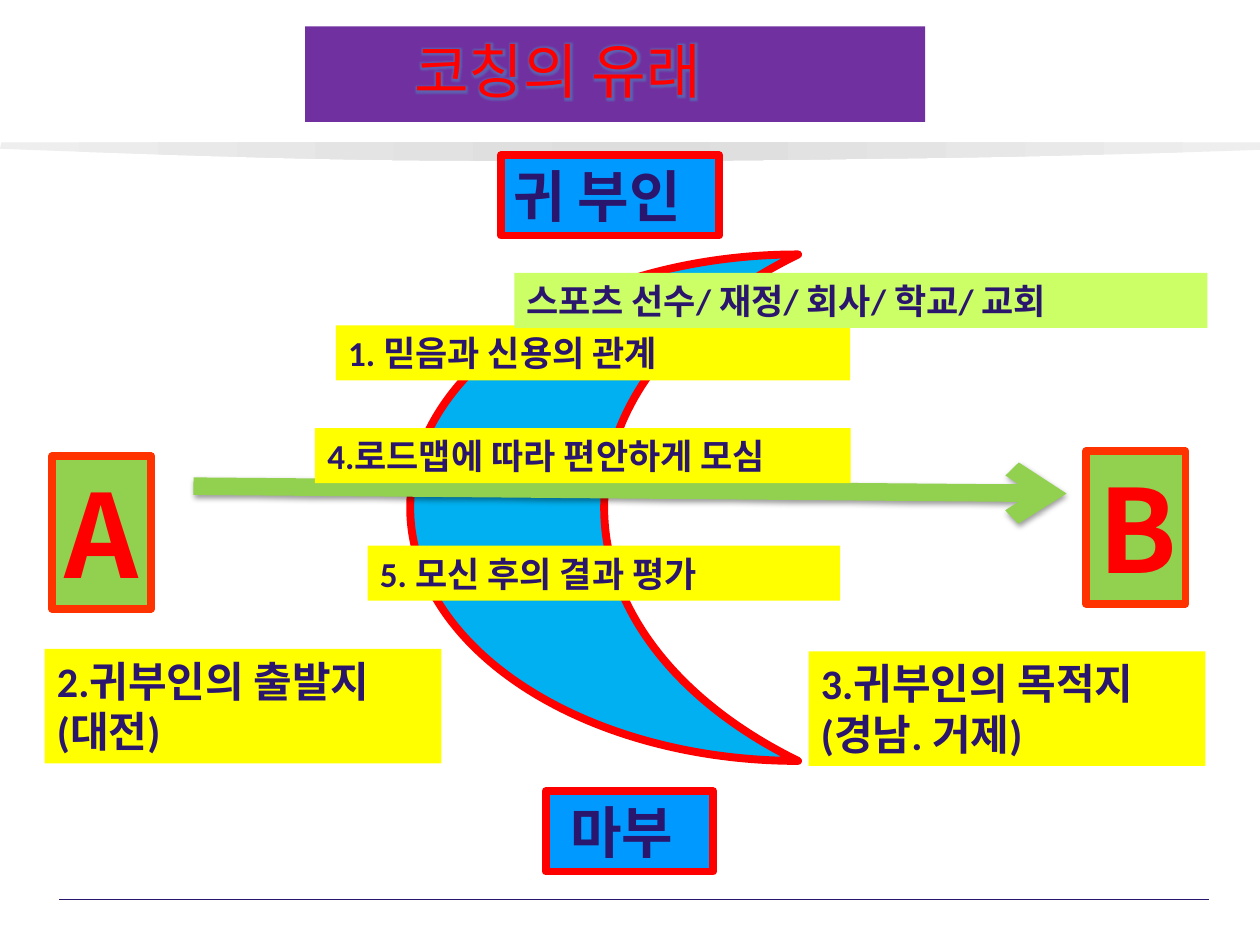
from dataclasses import dataclass

from lxml.etree import SubElement
from pptx import Presentation
from pptx.dml.color import RGBColor
from pptx.enum.shapes import MSO_CONNECTOR, MSO_SHAPE
from pptx.enum.text import MSO_ANCHOR, MSO_AUTO_SIZE, PP_ALIGN
from pptx.oxml import parse_xml
from pptx.oxml.ns import nsdecls, qn
from pptx.util import Cm, Pt


@dataclass(frozen=True)
class Theme:
    ink: str = "2B166E"
    red: str = "FF0000"
    orange: str = "FF3300"
    green: str = "92D050"
    lime: str = "CCFF66"
    yellow: str = "FFFF00"
    blue: str = "0099FF"
    sky: str = "00B0F0"
    purple: str = "7030A0"
    glow: str = "4F81BD"
    latin: str = "Calibri"
    korean: str = "Noto Sans CJK KR"
    letter: int = 66
    title: int = 34
    role: int = 32
    place: int = 24
    step: int = 20
    frame: float = 4.5


T = Theme()


def rgb(value):
    return RGBColor.from_string(value)


def write(sp, text, size, color=T.ink, font=T.latin, bold=True, wrap=True,
          anchor=MSO_ANCHOR.TOP, indent=0, spacing=None):
    """Fill a shape with left-aligned text, one paragraph per line."""
    tf = sp.text_frame
    tf.word_wrap = wrap
    tf.auto_size = MSO_AUTO_SIZE.NONE
    tf.vertical_anchor = anchor
    tf.margin_left = Cm(0.25 + indent)
    tf.margin_right = Cm(0.25)
    tf.margin_top = tf.margin_bottom = Cm(0.13)
    for i, line in enumerate(text.split("\n")):
        p = tf.paragraphs[0] if i == 0 else tf.add_paragraph()
        p.alignment = PP_ALIGN.LEFT
        if spacing:
            p.line_spacing = spacing
        r = p.add_run()
        r.text = line
        r.font.size, r.font.bold, r.font.name = Pt(size), bold, font
        r.font.color.rgb = rgb(color)
        SubElement(r.font._element, qn("a:ea")).set("typeface", T.korean)
    return tf


def add_block(s, box, fill, line=None, kind=MSO_SHAPE.RECTANGLE):
    sp = s.shapes.add_shape(kind, *map(Cm, box))
    sp.shadow.inherit = False
    sp.fill.solid()
    sp.fill.fore_color.rgb = rgb(fill)
    if line:
        sp.line.color.rgb = rgb(line)
        sp.line.width = Pt(T.frame)
    else:
        sp.line.fill.background()
    return sp


def add_line(s, start, end, color, width):
    c = s.shapes.add_connector(MSO_CONNECTOR.STRAIGHT, *map(Cm, start + end))
    c.line.color.rgb = rgb(color)
    c.line.width = Pt(width)
    SubElement(c._element.spPr, qn("a:effectLst"))
    return c


def add_arrow(s, start, end):
    c = add_line(s, start, end, T.green, 10)
    SubElement(c.line._get_or_add_ln(), qn("a:tailEnd")).set("type", "arrow")
    effects = c._element.spPr.find(qn("a:effectLst"))
    effects.append(parse_xml(
        f'<a:outerShdw {nsdecls("a")} blurRad="{Pt(3.1)}" dist="{Pt(1.6)}" dir="5400000" '
        'rotWithShape="0"><a:srgbClr val="000000"><a:alpha val="38000"/></a:srgbClr>'
        '</a:outerShdw>'))


def curve(a, b, c, d, steps=12):
    """Points along a cubic curve, without its first point."""
    for i in range(1, steps + 1):
        t = i / steps
        u = 1 - t
        yield tuple(Cm(u**3 * a[k] + 3 * u * u * t * b[k] + 3 * u * t * t * c[k] + t**3 * d[k])
                    for k in (0, 1))


def add_swoosh(s):
    """Grey band under the title with a curved lower edge."""
    knots = [(0, 3), (1.35, 3.05), (5.18, 3.2), (8.1, 3.23), (11.02, 3.25),
             (14.63, 3.25), (17.5, 3.2), (20.4, 3.18), (24.1, 3.07), (25.43, 3.02)]
    points = [pt for i in range(0, 9, 3) for pt in curve(*knots[i:i + 4])]
    fb = s.shapes.build_freeform(Cm(0.03), Cm(2.87))
    fb.add_line_segments([(0, Cm(3)), *points, (Cm(25.43), Cm(2.87))], close=True)
    sp = fb.convert_to_shape()
    sp.shadow.inherit = False
    sp.line.fill.background()
    sp.fill.gradient()
    sp.fill.gradient_angle = 0
    stops = sp._element.spPr.find(qn("a:gradFill")).find(qn("a:gsLst"))
    for stop in list(stops):
        stops.remove(stop)
    for pos, color in ((0, "EEEEEE"), (50, "DDDDDD"), (100, "EEEEEE")):
        gs = SubElement(stops, qn("a:gs"), pos=str(pos * 1000))
        SubElement(gs, qn("a:srgbClr"), val=color)


def format_title(s):
    sp = s.shapes.title
    sp.left, sp.top, sp.width, sp.height = map(Cm, (6.15, 0.53, 12.5, 1.93))
    sp.fill.solid()
    sp.fill.fore_color.rgb = rgb(T.purple)
    tf = write(sp, "코칭의 유래", T.title, color=T.red, font=T.korean, bold=False,
               anchor=MSO_ANCHOR.MIDDLE, indent=1.95, spacing=0.9)
    # Soft glow around the title letters
    fill = tf.paragraphs[0].runs[0].font._element.find(qn("a:solidFill"))
    fill.addnext(parse_xml(
        f'<a:effectLst {nsdecls("a")}><a:glow rad="{Pt(4)}"><a:srgbClr val="{T.glow}">'
        '<a:alpha val="60000"/></a:srgbClr></a:glow></a:effectLst>'))


def main():
    prs = Presentation()
    prs.slide_width, prs.slide_height = Cm(25.4), Cm(19.05)
    s = prs.slides.add_slide(prs.slide_layouts[5])

    # Title and page decoration
    format_title(s)
    add_swoosh(s)
    add_line(s, (1.19, 18.13), (24.38, 18.13), T.ink, 0.75)

    # Moon and the journey arrow
    add_block(s, (8.27, 5.13, 7.82, 10.21), T.sky, T.red, MSO_SHAPE.MOON)
    add_arrow(s, (3.9, 9.8), (21.5, 9.95))

    # Start and destination letters
    for letter, left, top in (("A", 1.05, 9.2), ("B", 21.9, 9.1)):
        sp = add_block(s, (left, top, 2, 3.07), T.green, T.orange)
        write(sp, letter, T.letter, color=T.red, font=T.korean, wrap=False)

    # Passenger and coachman
    for role, left, top, width, indent in (("귀 부인", 10.1, 3.13, 4.4, 0),
                                           ("마부", 11, 15.95, 3.38, 0.25)):
        sp = add_block(s, (left, top, width, 1.62), T.blue, T.red)
        write(sp, role, T.role, indent=indent)

    # Places
    for text, left, top in (("2.귀부인의 출발지\n(대전)", 0.9, 13.08),
                            ("3.귀부인의 목적지\n(경남. 거제)", 16.3, 13.13)):
        write(add_block(s, (left, top, 8, 2.31), T.yellow), text, T.place)

    # Steps and fields of use
    for text, left, top, width, fill in (
            ("4.로드맵에 따라 편안하게 모심", 6.35, 8.63, 10.8, T.yellow),
            ("5. 모신 후의 결과 평가", 7.41, 11, 9.53, T.yellow),
            ("1. 믿음과 신용의 관계", 6.77, 6.56, 10.37, T.yellow),
            ("스포츠 선수/ 재정/ 회사/ 학교/ 교회", 10.37, 5.5, 13.97, T.lime)):
        write(add_block(s, (left, top, width, 1.11), fill), text, T.step)

    prs.save("out.pptx")


if __name__ == "__main__":
    main()
